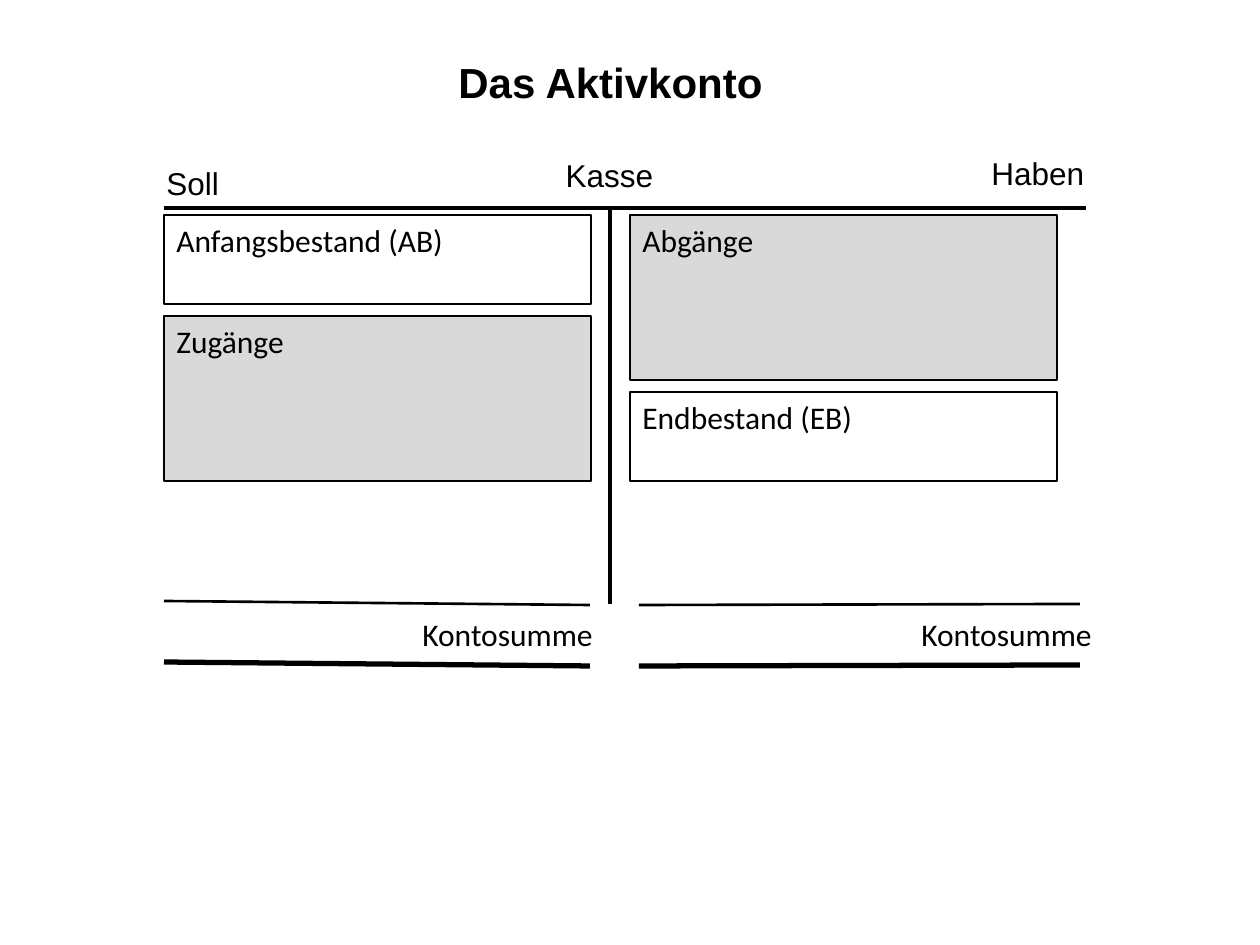
from dataclasses import dataclass

from lxml.etree import SubElement
from pptx import Presentation
from pptx.dml.color import RGBColor
from pptx.enum.shapes import MSO_CONNECTOR, MSO_SHAPE
from pptx.enum.text import MSO_ANCHOR, PP_ALIGN
from pptx.oxml.ns import qn
from pptx.util import Emu, Pt

EMU_PER_PX = 914400 / 126
COLORS = {"ink": "000000", "movement": "D9D9D9"}
LABEL_FORMAT = {"name": "Arial", "size": Pt(18), "bold": False}
TITLE_FORMAT = {"name": "Arial", "size": Pt(24), "bold": True}
ENTRY_FORMAT = {"name": "Calibri", "size": Pt(18), "bold": False}
FRAME_FORMAT = {"word_wrap": True, "vertical_anchor": MSO_ANCHOR.TOP}


@dataclass
class Label:
    text: str
    left: int
    top: int
    width: int
    height: int
    font: dict
    align: PP_ALIGN = PP_ALIGN.LEFT


@dataclass
class Entry:
    text: str
    left: int
    top: int
    height: int
    fill: str | None = None


@dataclass
class Rule:
    x1: int
    y1: int
    x2: int
    y2: int
    weight: float


def px(length: int) -> Emu:
    return Emu(round(length * EMU_PER_PX))


def color(key: str) -> RGBColor:
    return RGBColor.from_string(COLORS[key])


def apply_format(target, values: dict) -> None:
    for attribute, value in values.items():
        setattr(target, attribute, value)


def write_text(frame, text: str, font: dict, align: PP_ALIGN) -> None:
    apply_format(frame, FRAME_FORMAT)
    paragraph = frame.paragraphs[0]
    paragraph.alignment = align
    run = paragraph.add_run()
    run.text = text
    apply_format(run.font, font)
    run.font.color.rgb = color("ink")


def draw_label(slide, label: Label) -> None:
    box = slide.shapes.add_textbox(
        px(label.left), px(label.top), px(label.width), px(label.height))
    write_text(box.text_frame, label.text, label.font, label.align)


def draw_entry(slide, entry: Entry) -> None:
    box = slide.shapes.add_shape(
        MSO_SHAPE.RECTANGLE, px(entry.left), px(entry.top),
        px(ENTRY_WIDTH), px(entry.height))
    box.shadow.inherit = False
    if entry.fill:
        box.fill.solid()
        box.fill.fore_color.rgb = color(entry.fill)
    else:
        box.fill.background()
    box.line.color.rgb = color("ink")
    box.line.width = Pt(0.75)
    write_text(box.text_frame, entry.text, ENTRY_FORMAT, PP_ALIGN.LEFT)


def draw_rule(slide, rule: Rule) -> None:
    line = slide.shapes.add_connector(
        MSO_CONNECTOR.STRAIGHT,
        px(rule.x1), px(rule.y1), px(rule.x2), px(rule.y2))
    line.line.color.rgb = color("ink")
    line.line.width = Pt(rule.weight)
    SubElement(line._element.spPr, qn("a:effectLst"))


# Account geometry
DEBIT_LEFT, CREDIT_LEFT = 164, 630
ENTRY_WIDTH, ENTRY_TOP, ENTRY_GAP = 427, 215, 12
BALANCE_HEIGHT, MOVEMENT_HEIGHT = 89, 165
HEADER_Y, DIVIDER_X = 208, 610
TOTAL_DROP = 61

# Title and account headings
LABELS = [
    Label("Das Aktivkonto", 343, 50, 535, 63, TITLE_FORMAT, PP_ALIGN.CENTER),
    Label("Soll", 154, 158, 189, 50, LABEL_FORMAT),
    Label("Kasse", 426, 150, 367, 50, LABEL_FORMAT, PP_ALIGN.CENTER),
    Label("Haben", 979, 148, 189, 50, LABEL_FORMAT),
]
# Account totals
LABELS += [Label("Kontosumme", left, 609, 202, 50, ENTRY_FORMAT)
           for left in (410, 909)]

# Debit and credit entries
ENTRIES = [
    Entry("Anfangsbestand (AB)", DEBIT_LEFT, ENTRY_TOP, BALANCE_HEIGHT),
    Entry("Zugänge", DEBIT_LEFT, ENTRY_TOP + BALANCE_HEIGHT + ENTRY_GAP,
          MOVEMENT_HEIGHT, "movement"),
    Entry("Abgänge", CREDIT_LEFT, ENTRY_TOP, MOVEMENT_HEIGHT, "movement"),
    Entry("Endbestand (EB)", CREDIT_LEFT,
          ENTRY_TOP + MOVEMENT_HEIGHT + ENTRY_GAP, BALANCE_HEIGHT),
]

# T-account lines, then a thin and a thick rule around each total
RULES = [
    Rule(DIVIDER_X, HEADER_Y, DIVIDER_X, 604, 2.25),
    Rule(DEBIT_LEFT, HEADER_Y, 1086, HEADER_Y, 2.25),
]
for drop, weight in ((0, 1.5), (TOTAL_DROP, 3)):
    RULES += [
        Rule(DEBIT_LEFT, 601 + drop, 590, 605 + drop, weight),
        Rule(639, 605 + drop, 1080, 604 + drop, weight),
    ]


def main() -> None:
    deck = Presentation()
    deck.slide_width, deck.slide_height = px(1260), px(945)
    slide = deck.slides.add_slide(deck.slide_layouts[6])
    for rule in RULES:
        draw_rule(slide, rule)
    for entry in ENTRIES:
        draw_entry(slide, entry)
    for label in LABELS:
        draw_label(slide, label)
    deck.save("out.pptx")


if __name__ == "__main__":
    main()
